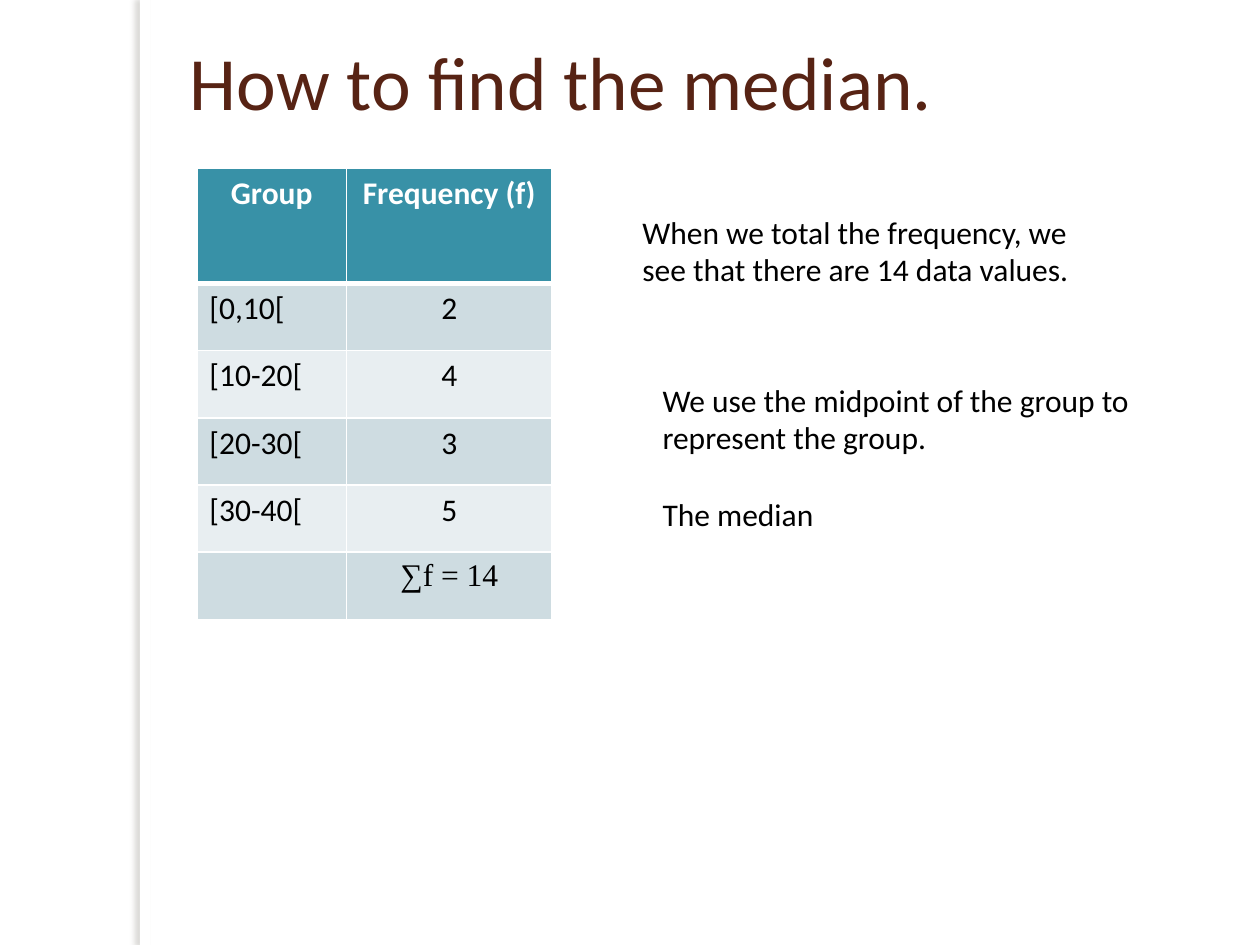
from lxml.etree import SubElement
from pptx import Presentation
from pptx.dml.color import RGBColor
from pptx.enum.shapes import MSO_SHAPE
from pptx.enum.text import MSO_ANCHOR, PP_ALIGN
from pptx.oxml.ns import qn
from pptx.util import Pt

COLORS = {
    "white": "FFFFFF",
    "black": "000000",
    "title": "572314",
    "header": "3891A7",
    "band_dark": "CEDCE1",
    "band_light": "E8EEF1",
    "shadow": "736F63",
}

ROWS = [
    ("Group", "Frequency (f)"),
    ("[0,10[", "2"),
    ("[10-20[", "4"),
    ("[20-30[", "3"),
    ("[30-40[", "5"),
    ("", "∑f = 14"),
]


def color(name):
    return RGBColor.from_string(COLORS[name])


def write(paragraph, text, color_name, **formats):
    run = paragraph.add_run()
    run.text = text
    values = {"name": "Calibri", "size": Pt(18), "bold": False} | formats
    for attribute, value in values.items():
        setattr(run.font, attribute, value)
    run.font.color.rgb = color(color_name)


def add_text(slide, box, paragraphs, color_name="black", gap=0, **formats):
    shape = slide.shapes.add_textbox(*map(Pt, box))
    frame = shape.text_frame
    frame.word_wrap = True
    frame.vertical_anchor = MSO_ANCHOR.TOP
    for index, text in enumerate(paragraphs):
        paragraph = frame.add_paragraph() if index else frame.paragraphs[0]
        if index:
            paragraph.space_before = Pt(gap)
        write(paragraph, text, color_name, **formats)


def add_side_edge(slide):
    shape = slide.shapes.add_shape(
        MSO_SHAPE.RECTANGLE, Pt(80), Pt(0), Pt(5.76), Pt(540))
    shape.shadow.inherit = False
    shape.fill.solid()
    shape.fill.fore_color.rgb = color("white")
    shape.line.fill.background()
    # Soft shadow cast to the left
    effects = shape.element.spPr.find(qn("a:effectLst"))
    shadow = SubElement(effects, qn("a:outerShdw"), blurRad=str(Pt(3)),
                        dist=str(Pt(3)), dir="10800000", rotWithShape="0")
    tint = SubElement(shadow, qn("a:srgbClr"), val=COLORS["shadow"])
    SubElement(tint, qn("a:alpha"), val="25000")


def set_borders(cell, widths):
    properties = cell._tc.get_or_add_tcPr()
    for position, (side, width) in enumerate(widths.items()):
        line = SubElement(properties, qn(f"a:ln{side}"), w=str(Pt(width)))
        fill = SubElement(line, qn("a:solidFill"))
        SubElement(fill, qn("a:srgbClr"), val=COLORS["white"])
        # Border lines come before the cell fill
        properties.insert(position, line)


def add_frequency_table(slide):
    widths, heights = [85.5, 117.5], [66] + [38.4] * (len(ROWS) - 1)
    table = slide.shapes.add_table(
        len(ROWS), len(widths), Pt(112.5), Pt(96),
        Pt(sum(widths)), Pt(sum(heights))).table
    for column, width in zip(table.columns, widths):
        column.width = Pt(width)
    for row, height in zip(table.rows, heights):
        row.height = Pt(height)

    for row_index, texts in enumerate(ROWS):
        header = row_index == 0
        band = "band_dark" if row_index % 2 else "band_light"
        for column_index, text in enumerate(texts):
            cell = table.cell(row_index, column_index)
            cell.fill.solid()
            cell.fill.fore_color.rgb = color("header" if header else band)
            set_borders(cell, {"L": 1, "R": 1,
                               "T": 3 if row_index == 1 else 1,
                               "B": 3 if header else 1})
            paragraph = cell.text_frame.paragraphs[0]
            centred = header or column_index == 1
            paragraph.alignment = PP_ALIGN.CENTER if centred else PP_ALIGN.LEFT
            if text:
                font = "Times New Roman" if text.startswith("∑") else "Calibri"
                write(paragraph, text, "white" if header else "black",
                      name=font, bold=header)


def main():
    presentation = Presentation()
    presentation.slide_width, presentation.slide_height = Pt(720), Pt(540)
    slide = presentation.slides.add_slide(presentation.slide_layouts[6])

    # Side edge and table
    add_side_edge(slide)
    add_frequency_table(slide)

    # Title and explanations
    add_text(slide, (101.5, 16.5, 590.5, 73.5), ["How to find the median."],
             "title", size=Pt(43))
    add_text(slide, (360, 118, 264, 72.5),
             ["When we total the frequency, we see that there are 14 data values."])
    add_text(slide, (371.5, 214, 286.5, 94.5),
             ["We use the midpoint of the group to represent the group.",
              "The median"], gap=22)

    presentation.save("out.pptx")


if __name__ == "__main__":
    main()
